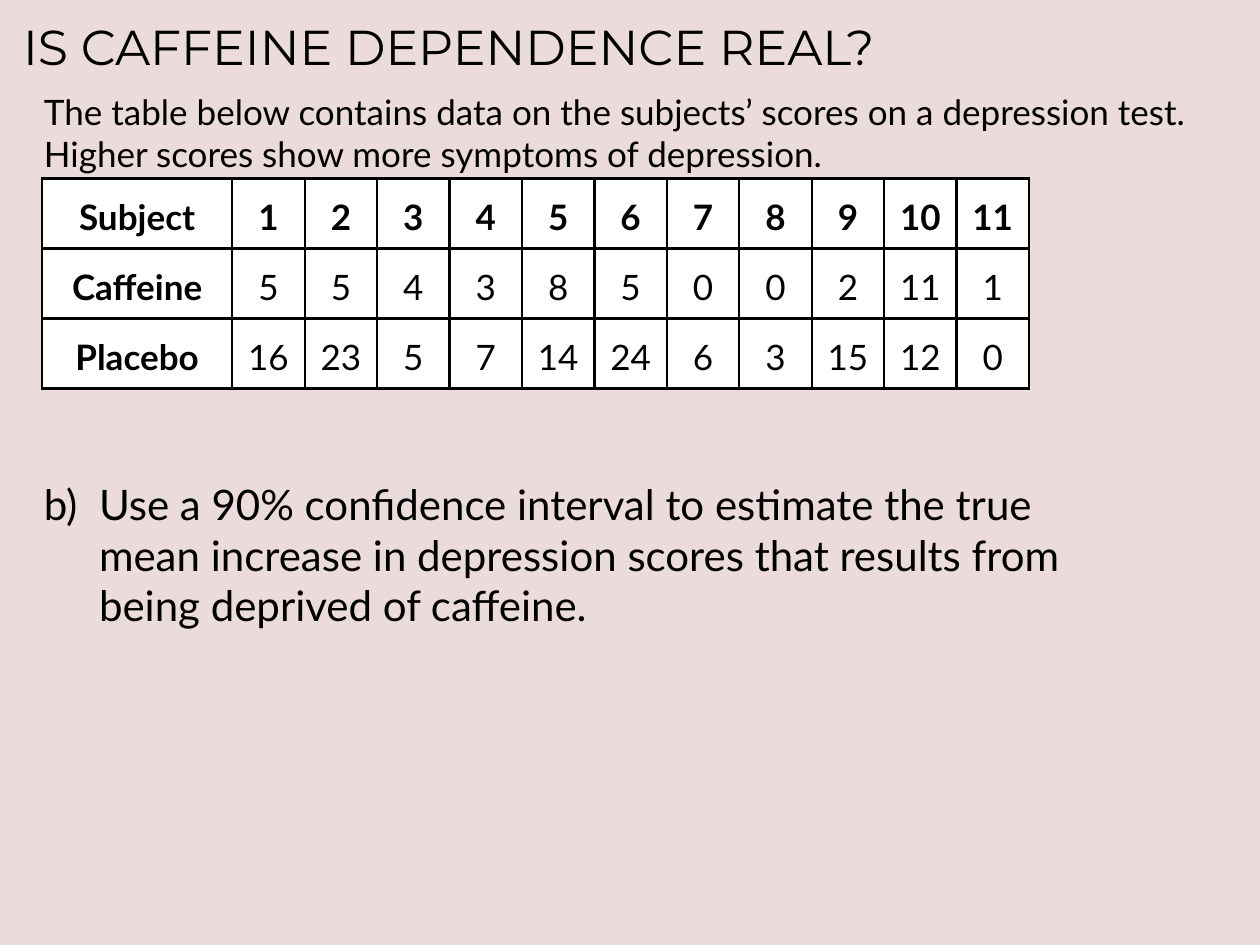
from dataclasses import dataclass

from lxml.etree import SubElement
from pptx import Presentation
from pptx.dml.color import RGBColor
from pptx.enum.text import MSO_ANCHOR, MSO_AUTO_SIZE, PP_ALIGN
from pptx.oxml.ns import qn
from pptx.util import Pt


@dataclass(frozen=True)
class Theme:
    """Colours, fonts and type sizes of the deck."""
    background: RGBColor = RGBColor(0xEC, 0xDB, 0xDB)
    ink: RGBColor = RGBColor(0, 0, 0)
    cell: RGBColor = RGBColor(0xFF, 0xFF, 0xFF)
    title_font: str = "Montserrat"
    body_font: str = "Lato"
    title_size: int = 28
    body_size: int = 20
    question_size: int = 24
    border: float = 1.5


@dataclass(frozen=True)
class Box:
    """A rectangle in points."""
    left: float
    top: float
    width: float
    height: float

    def lengths(self):
        """Return the four sides as lengths."""
        return [Pt(side) for side in (self.left, self.top, self.width, self.height)]


THEME = Theme()
SCORES = [
    ("Subject", list(range(1, 12))),
    ("Caffeine", [5, 5, 4, 3, 8, 5, 0, 0, 2, 11, 1]),
    ("Placebo", [16, 23, 5, 7, 14, 24, 6, 3, 15, 12, 0]),
]


def add_span(para, text, size, font=THEME.body_font, bold=False):
    """Add one formatted run to a paragraph."""
    span = para.add_run()
    span.text = text
    span.font.name = font
    span.font.size = Pt(size)
    span.font.bold = bold
    span.font.color.rgb = THEME.ink


def add_title(page, box, text):
    """Place and format the title placeholder."""
    title = page.shapes.title
    title.left, title.top, title.width, title.height = box.lengths()
    frame = title.text_frame
    frame.word_wrap = False
    frame.auto_size = MSO_AUTO_SIZE.SHAPE_TO_FIT_TEXT
    frame.vertical_anchor = MSO_ANCHOR.TOP
    para = frame.paragraphs[0]
    para.alignment = PP_ALIGN.LEFT
    add_span(para, text, THEME.title_size, THEME.title_font)


def add_text(page, box, text, size, hanging=0):
    """Add a wrapped paragraph with an optional hanging indent."""
    frame = page.shapes.add_textbox(*box.lengths()).text_frame
    frame.word_wrap = True
    frame.auto_size = MSO_AUTO_SIZE.SHAPE_TO_FIT_TEXT
    para = frame.paragraphs[0]
    if hanging:
        properties = para._p.get_or_add_pPr()
        properties.set("marL", str(Pt(hanging)))
        properties.set("indent", str(-Pt(hanging)))
    add_span(para, text, size)


def add_borders(cell):
    """Draw a solid line on all four sides of a cell."""
    properties = cell._tc.get_or_add_tcPr()
    for side in ("lnL", "lnR", "lnT", "lnB"):
        line = SubElement(properties, qn(f"a:{side}"), w=str(Pt(THEME.border)))
        fill = SubElement(line, qn("a:solidFill"))
        SubElement(fill, qn("a:srgbClr"), val=str(THEME.ink))


def format_cell(cell, text, bold):
    """Fill, border and label one table cell."""
    add_borders(cell)
    cell.fill.solid()
    cell.fill.fore_color.rgb = THEME.cell
    cell.vertical_anchor = MSO_ANCHOR.MIDDLE
    cell.margin_left = cell.margin_right = Pt(5)
    cell.margin_top = cell.margin_bottom = Pt(0)
    para = cell.text_frame.paragraphs[0]
    para.alignment = PP_ALIGN.CENTER
    para.line_spacing = 1.15
    add_span(para, text, THEME.body_size, bold=bold)


def add_score_table(page, box, label_width):
    """Add the table of scores, with equal columns after the labels."""
    subject_count = len(SCORES[0][1])
    table = page.shapes.add_table(len(SCORES), subject_count + 1, *box.lengths()).table
    score_width = (box.width - label_width) / subject_count
    for index, column in enumerate(table.columns):
        column.width = Pt(score_width if index else label_width)
    for row_index, (label, scores) in enumerate(SCORES):
        table.rows[row_index].height = Pt(box.height / len(SCORES))
        for column_index, value in enumerate([label, *scores]):
            bold = row_index == 0 or column_index == 0
            format_cell(table.cell(row_index, column_index), str(value), bold)


def build_page(deck):
    """Add the caffeine dependence slide."""
    page = deck.slides.add_slide(deck.slide_layouts[5])
    page.background.fill.solid()
    page.background.fill.fore_color.rgb = THEME.background
    add_title(page, Box(6, 6, 510, 41), "IS CAFFEINE DEPENDENCE REAL?")
    add_text(
        page, Box(18, 48, 672, 55.5),
        "The table below contains data on the subjects’ scores on a depression test. "
        "Higher scores show more symptoms of depression.",
        THEME.body_size,
    )
    add_score_table(page, Box(24, 102, 564, 120), 108.75)
    add_text(
        page, Box(18, 270, 624, 94.5),
        "b)\tUse a 90% confidence interval to estimate the true mean increase "
        "in depression scores that results from being deprived of caffeine.",
        THEME.question_size, hanging=31.5,
    )


def main():
    """Build and save the deck."""
    deck = Presentation()
    deck.slide_width, deck.slide_height = Pt(720), Pt(540)
    build_page(deck)
    deck.save("out.pptx")


if __name__ == "__main__":
    main()
